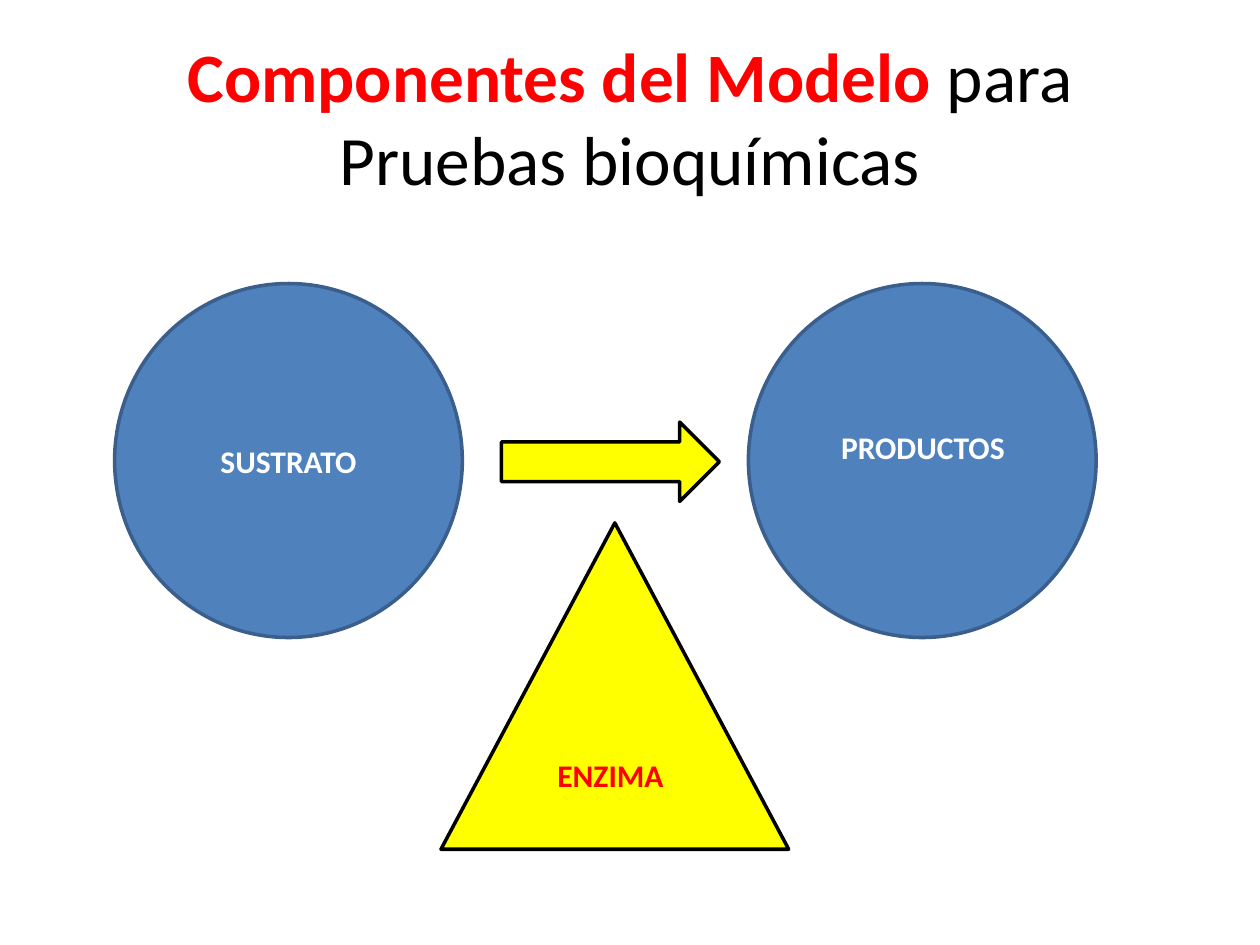
import pptx
import pptx.util
import pptx.dml.color
import pptx.enum.shapes
import pptx.enum.text
from dataclasses import dataclass

Inches = pptx.util.Inches
Shape = pptx.enum.shapes.MSO_SHAPE
Anchor = pptx.enum.text.MSO_ANCHOR


@dataclass(frozen=True)
class Theme:
    font: str = "Calibri"
    title_size: float = 39.6
    label_size: float = 18
    line_width: float = 2
    blue: str = "4F81BD"
    dark_blue: str = "3A5F8C"
    yellow: str = "FFFF00"
    red: str = "FF0000"
    black: str = "000000"
    white: str = "FFFFFF"


THEME = Theme()

# Content: runs are (text, colour, bold); places are left, top, width, height
TITLE = [("Componentes del Modelo ", THEME.red, True),
         ("para Pruebas bioquímicas", THEME.black, False)]
TITLE_PLACE = (0.5, 0.3, 9, 1.25)

CIRCLE_TOP, CIRCLE_WIDTH, CIRCLE_HEIGHT = 2.25, 2.76, 2.81
SUBSTRATE_LEFT, PRODUCT_LEFT = 0.91, 5.94
SUBSTRATE = [("SUSTRATO", THEME.white, True)]

FIGURES = [  # preset, place, fill, line, runs
    (Shape.OVAL, (SUBSTRATE_LEFT, CIRCLE_TOP, CIRCLE_WIDTH, CIRCLE_HEIGHT),
     THEME.blue, THEME.dark_blue, SUBSTRATE),
    (Shape.OVAL, (PRODUCT_LEFT, CIRCLE_TOP, CIRCLE_WIDTH, CIRCLE_HEIGHT),
     THEME.blue, THEME.dark_blue, []),
    (Shape.RIGHT_ARROW, (3.98, 3.35, 1.73, 0.63),
     THEME.yellow, THEME.black, []),
    (Shape.FLOWCHART_EXTRACT, (3.5, 4.15, CIRCLE_WIDTH, 2.59),
     THEME.yellow, THEME.black, []),
]
LABELS = [
    ([("PRODUCTOS", THEME.white, True)], (6.26, 3.35, 2.13, 0.4)),
    ([("ENZIMA", THEME.red, True)], (3.9, 5.95, 1.89, 0.4)),
]


def color(code):
    return pptx.dml.color.RGBColor.from_string(code)


def write(box, runs, size, anchor):
    frame = box.text_frame
    frame.word_wrap = True
    frame.vertical_anchor = anchor
    para = frame.paragraphs[0]
    para.alignment = pptx.enum.text.PP_ALIGN.CENTER
    for text, code, bold in runs:
        span = para.add_run()
        span.text = text
        span.font.name = THEME.font
        span.font.size = pptx.util.Pt(size)
        span.font.bold = bold
        span.font.color.rgb = color(code)


def add_text(page, runs, place, size, anchor):
    box = page.shapes.add_textbox(*map(Inches, place))
    write(box, runs, size, anchor)


def add_figure(page, preset, place, fill, line, runs):
    figure = page.shapes.add_shape(preset, *map(Inches, place))
    figure.shadow.inherit = False
    figure.fill.solid()
    figure.fill.fore_color.rgb = color(fill)
    figure.line.color.rgb = color(line)
    figure.line.width = pptx.util.Pt(THEME.line_width)
    if runs:
        write(figure, runs, THEME.label_size, Anchor.MIDDLE)


def main():
    deck = pptx.Presentation()
    deck.slide_width, deck.slide_height = Inches(10), Inches(7.5)
    page = deck.slides.add_slide(deck.slide_layouts[6])

    # Title
    add_text(page, TITLE, TITLE_PLACE, THEME.title_size, Anchor.MIDDLE)

    # Reaction: substrate, product, arrow and enzyme
    for figure in FIGURES:
        add_figure(page, *figure)

    # Labels over the figures
    for runs, place in LABELS:
        add_text(page, runs, place, THEME.label_size, Anchor.TOP)

    deck.save("out.pptx")


if __name__ == "__main__":
    main()
